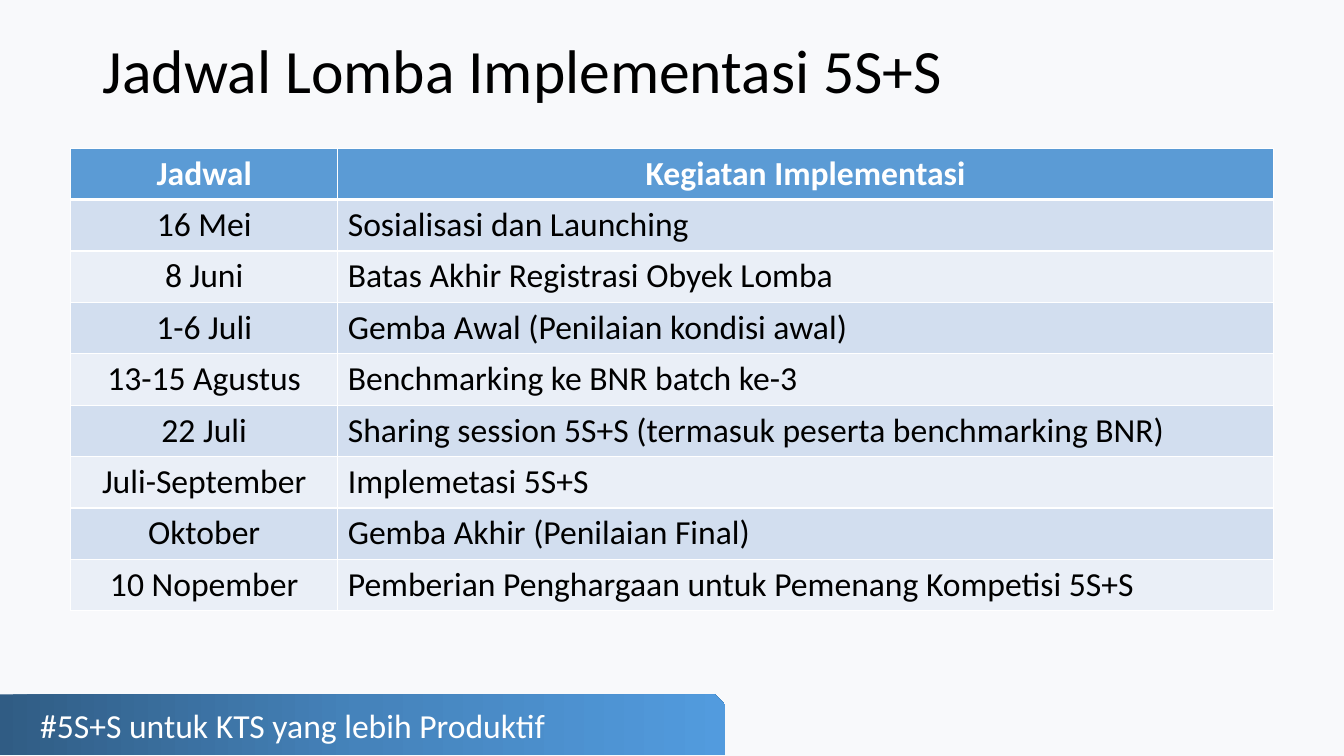
import copy

import pptx
import pptx.dml.color
import pptx.enum.shapes
import pptx.enum.text
import pptx.oxml
import pptx.oxml.ns
import pptx.util
from lxml import etree

TITLE = "Jadwal Lomba Implementasi 5S+S"
TAGLINE = "#5S+S untuk KTS yang lebih Produktif"
SCHEDULE = [
    ("Jadwal", "Kegiatan Implementasi"),
    ("16 Mei", "Sosialisasi dan Launching"),
    ("8 Juni", "Batas Akhir Registrasi Obyek Lomba"),
    ("1-6 Juli", "Gemba Awal (Penilaian kondisi awal)"),
    ("13-15 Agustus", "Benchmarking ke BNR batch ke-3"),
    ("22 Juli", "Sharing session 5S+S (termasuk peserta benchmarking BNR)"),
    ("Juli-September", "Implemetasi 5S+S"),
    ("Oktober", "Gemba Akhir (Penilaian Final)"),
    ("10 Nopember", "Pemberian Penghargaan untuk Pemenang Kompetisi 5S+S"),
]
COLORS = {
    "background": "F8F9FB", "text": "000000", "white": "FFFFFF",
    "header": "5B9BD5", "odd": "D2DEEF", "even": "EAEFF7",
}
BANNER_STOPS = [(0, "305C84"), (0.5, "4583BB"), (1, "529BDE")]
FONT = "Calibri"
COLUMNS = (2.65, 9.28)
ROW_HEIGHT = 0.51

Inches, Pt = pptx.util.Inches, pptx.util.Pt
RGB = pptx.dml.color.RGBColor.from_string
ALIGN = pptx.enum.text.PP_ALIGN
ANCHOR = pptx.enum.text.MSO_ANCHOR
qn = pptx.oxml.ns.qn


def place(shape, left, top, width, height):
    shape.left, shape.top = Inches(left), Inches(top)
    shape.width, shape.height = Inches(width), Inches(height)


def write(tf, text, size, color, align=ALIGN.LEFT, bold=False):
    tf.text = text
    p = tf.paragraphs[0]
    p.alignment = align
    font = p.runs[0].font
    font.name, font.size, font.bold = FONT, Pt(size), bold
    font.color.rgb = RGB(COLORS[color])
    return p


def set_borders(cell, bottom):
    """Draw white cell edges; bottom is the lower edge's width in points."""
    tcPr = cell._tc.get_or_add_tcPr()
    edges = {"lnL": 1, "lnR": 1, "lnT": 1, "lnB": bottom}
    for i, (tag, width) in enumerate(edges.items()):
        ln = etree.Element(qn("a:" + tag), w=str(Pt(width)))
        fill = etree.SubElement(ln, qn("a:solidFill"))
        etree.SubElement(fill, qn("a:srgbClr"), val=COLORS["white"])
        tcPr.insert(i, ln)


def add_banner(s):
    banner = s.shapes.add_shape(
        pptx.enum.shapes.MSO_SHAPE.SNIP_1_RECTANGLE,
        0, Inches(6.89), Inches(7.19), Inches(0.6))
    banner.shadow.inherit = False
    banner.line.fill.background()
    banner.fill.gradient()
    banner.fill.gradient_angle = 0
    stops = banner._element.spPr.find(".//" + qn("a:gsLst"))
    stops.append(copy.deepcopy(stops[-1]))
    for stop, (position, color) in zip(banner.fill.gradient_stops, BANNER_STOPS):
        stop.position = position
        stop.color.rgb = RGB(color)

    tagline = s.shapes.add_textbox(
        Inches(0.3), Inches(6.94), Inches(6), Inches(0.5))
    tagline.text_frame.word_wrap = True
    write(tagline.text_frame, TAGLINE, 24, "white")


def add_title(s):
    title = s.shapes.title
    place(title, 0.92, 0.19, 11.5, 1.07)
    title.text_frame.vertical_anchor = ANCHOR.MIDDLE
    p = write(title.text_frame, TITLE, 44, "text")
    p.line_spacing = 0.9


def add_schedule(s):
    table = s.shapes.add_table(
        len(SCHEDULE), len(COLUMNS), Inches(0.7), Inches(1.47),
        Inches(sum(COLUMNS)), Inches(ROW_HEIGHT * len(SCHEDULE))).table
    for column, width in zip(table.columns, COLUMNS):
        column.width = Inches(width)
    for r, row in enumerate(SCHEDULE):
        header = r == 0
        band = "header" if header else "odd" if r % 2 else "even"
        for c, text in enumerate(row):
            cell = table.cell(r, c)
            cell.fill.solid()
            cell.fill.fore_color.rgb = RGB(COLORS[band])
            centred = header or c == 0
            write(cell.text_frame, text, 24, "white" if header else "text",
                  ALIGN.CENTER if centred else ALIGN.LEFT, header)
            set_borders(cell, 3 if header else 1)


def main():
    prs = pptx.Presentation()
    prs.slide_width, prs.slide_height = Inches(13.33), Inches(7.5)
    s = prs.slides.add_slide(prs.slide_layouts[5])
    s.background.fill.solid()
    s.background.fill.fore_color.rgb = RGB(COLORS["background"])
    add_banner(s)
    add_title(s)
    add_schedule(s)
    prs.save("out.pptx")


if __name__ == "__main__":
    main()
